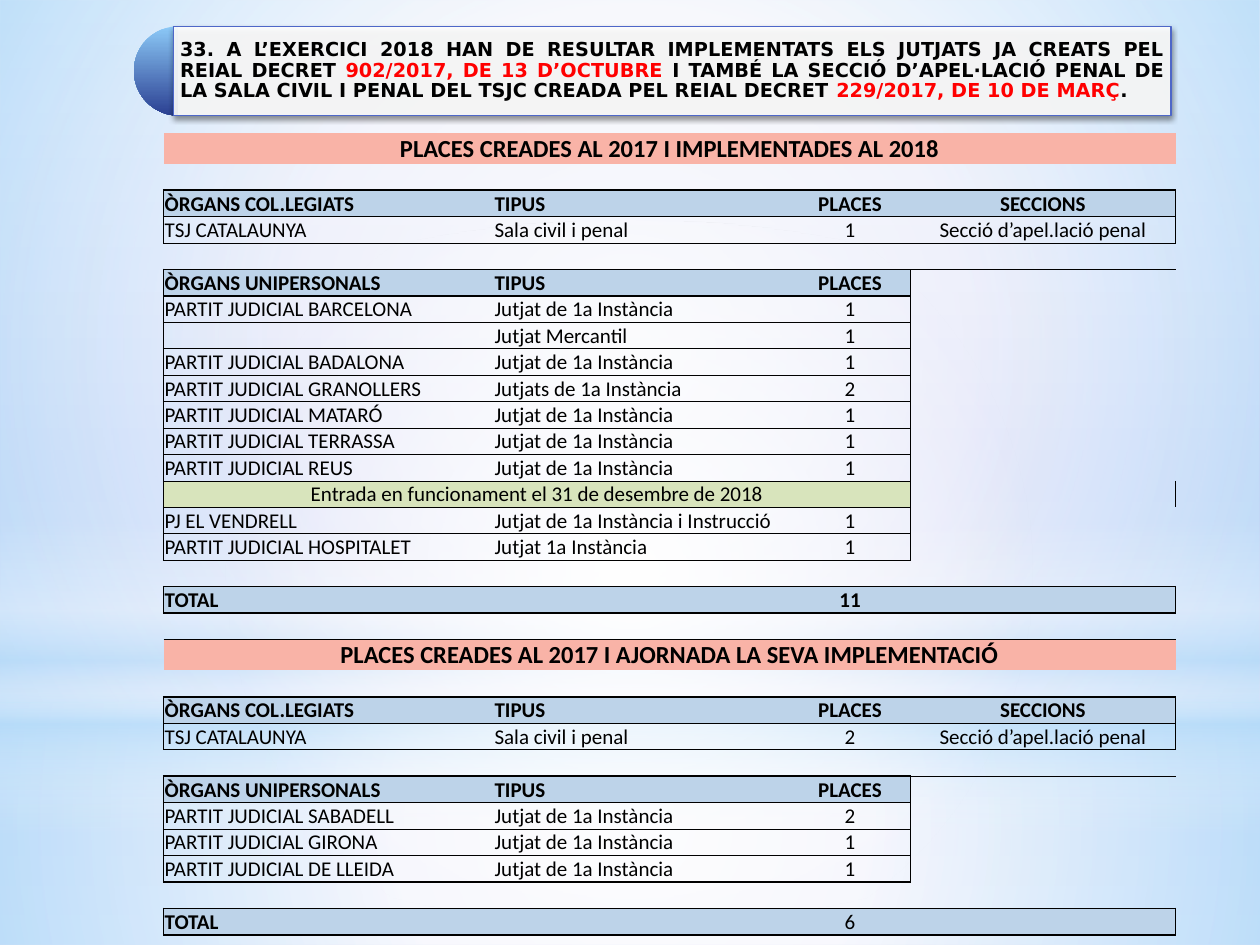
from lxml.etree import SubElement
from pptx import Presentation
from pptx.dml.color import RGBColor
from pptx.enum.shapes import MSO_SHAPE
from pptx.enum.text import MSO_ANCHOR, PP_ALIGN
from pptx.oxml.ns import qn
from pptx.util import Cm, Pt

COLORS = {
    "black": "000000", "red": "FF0000", "white": "FFFFFF", "sky": "B4DCFA",
    "salmon": "F9B3A7", "header": "BDD3E9", "note": "D8E4BC", "line": "4E67C8",
    "pie_top": "8CC9F7", "pie_bottom": "2B4092",
    "edge": "EBEEF9", "lilac": "C1C7F2", "foot": "E1E3F8",
}
BANNER = [
    ("33. A L’EXERCICI 2018 HAN DE RESULTAR IMPLEMENTATS ELS JUTJATS JA CREATS PEL REIAL DECRET ", "black"),
    ("902/2017, DE 13 D’OCTUBRE ", "red"),
    ("I TAMBÉ LA SECCIÓ D’APEL·LACIÓ PENAL DE LA SALA CIVIL I PENAL DEL TSJC CREADA PEL REIAL DECRET ", "black"),
    ("229/2017, DE 10 DE MARÇ", "red"),
    (".", "black"),
]
COLLEGIATE = ("ÒRGANS COL.LEGIATS", "TIPUS", "PLACES", "SECCIONS")
SINGLE = ("ÒRGANS UNIPERSONALS", "TIPUS", "PLACES")
FIRST_INSTANCE = "Jutjat de 1a Instància"
CREATED = [
    ("PARTIT JUDICIAL BARCELONA", FIRST_INSTANCE, "1"),
    ("", "Jutjat Mercantil", "1"),
    ("PARTIT JUDICIAL BADALONA", FIRST_INSTANCE, "1"),
    ("PARTIT JUDICIAL GRANOLLERS", "Jutjats de 1a Instància", "2"),
    ("PARTIT JUDICIAL MATARÓ", FIRST_INSTANCE, "1"),
    ("PARTIT JUDICIAL TERRASSA", FIRST_INSTANCE, "1"),
    ("PARTIT JUDICIAL REUS", FIRST_INSTANCE, "1"),
    ("Entrada en funcionament el 31 de desembre de 2018",),
    ("PJ EL VENDRELL", "Jutjat de 1a Instància i Instrucció", "1"),
    ("PARTIT JUDICIAL HOSPITALET", "Jutjat 1a Instància", "1"),
]
POSTPONED = [
    ("PARTIT JUDICIAL SABADELL", FIRST_INSTANCE, "2"),
    ("PARTIT JUDICIAL GIRONA", FIRST_INSTANCE, "1"),
    ("PARTIT JUDICIAL DE LLEIDA", FIRST_INSTANCE, "1"),
]
COLUMN_WIDTHS = (6.65, 5.97, 2.43, 5.35)
TABLE_HEIGHT, TITLE_HEIGHT = 16.19, 0.62
OPPOSITE = {"L": ("R", 0, -1), "R": ("L", 0, 1), "T": ("B", -1, 0), "B": ("T", 1, 0)}


def section_rows(title, places, courts, total, total_kind):
    """Return (kind, texts) for every row of one section."""
    court_rows = [("note" if len(court) == 1 else "data", court) for court in courts]
    return [
        ("title", (title,)), ("gap", ()),
        ("header", COLLEGIATE),
        ("data", ("TSJ CATALAUNYA", "Sala civil i penal", places, "Secció d’apel.lació penal")),
        ("gap", ()), ("header", SINGLE), *court_rows,
        ("gap", ()), (total_kind, ("TOTAL", "", total, "")),
    ]


class SlideBuilder:
    FONT = "Calibri"
    BANNER_FONT = "DejaVu Sans"
    FILLS = {"title": "salmon", "header": "header", "note": "note",
             "total": "header", "plain total": "header"}

    def __init__(self, presentation):
        self.slide = presentation.slides.add_slide(presentation.slide_layouts[6])

    def gradient(self, fill, holder, stops, angle=None):
        """Fill with (position, colour, opacity) stops; radial when no angle is given."""
        fill.solid()
        solid = holder.find(".//" + qn("a:solidFill"))
        gradient = SubElement(solid.getparent(), qn("a:gradFill"), rotWithShape="1")
        solid.getparent().replace(solid, gradient)
        stop_list = SubElement(gradient, qn("a:gsLst"))
        for position, color, opacity in stops:
            stop = SubElement(stop_list, qn("a:gs"), pos=str(position * 1000))
            value = SubElement(stop, qn("a:srgbClr"), val=COLORS[color])
            SubElement(value, qn("a:alpha"), val=str(opacity * 1000))
        if angle is None:
            radial = SubElement(gradient, qn("a:path"), path="circle")
            SubElement(radial, qn("a:fillToRect"), l="50000", t="50000", r="50000", b="50000")
        else:
            SubElement(gradient, qn("a:lin"), ang=str(angle * 60000), scaled="0")

    def background(self, stops):
        self.gradient(self.slide.background.fill, self.slide.element, stops, 90)

    def shape(self, preset, box):
        shape = self.slide.shapes.add_shape(preset, *map(Cm, box))
        shape.shadow.inherit = False
        shape.line.fill.background()
        return shape

    def gradient_shape(self, preset, box, stops, angle=None):
        shape = self.shape(preset, box)
        self.gradient(shape.fill, shape.element.spPr, stops, angle)
        return shape

    def panel(self, box):
        shape = self.shape(MSO_SHAPE.RECTANGLE, box)
        shape.fill.solid()
        shape.fill.fore_color.rgb = RGBColor.from_string(COLORS["white"])
        properties = shape.element.spPr
        SubElement(properties.find(".//" + qn("a:srgbClr")), qn("a:alpha"), val="90000")
        shape.line.color.rgb = RGBColor.from_string(COLORS["line"])
        shape.line.width = Pt(0.75)
        shadow = SubElement(properties.find(qn("a:effectLst")), qn("a:outerShdw"),
                            blurRad=str(Pt(3.1)), dist=str(Pt(1.8)), dir="5400000", rotWithShape="0")
        color = SubElement(shadow, qn("a:srgbClr"), val=COLORS["black"])
        SubElement(color, qn("a:alpha"), val="45000")

    def style(self, font, name, size, bold, color="black"):
        font.name, font.size, font.bold = name, Pt(size), bold
        font.color.rgb = RGBColor.from_string(COLORS[color])

    def banner_text(self, box, parts):
        frame = self.slide.shapes.add_textbox(*map(Cm, box)).text_frame
        frame.word_wrap = True
        frame.vertical_anchor = MSO_ANCHOR.MIDDLE
        frame.margin_left = frame.margin_right = frame.margin_top = frame.margin_bottom = Cm(0.13)
        paragraph = frame.paragraphs[0]
        paragraph.alignment = PP_ALIGN.JUSTIFY
        paragraph.line_spacing = 0.9
        for text, color in parts:
            run = paragraph.add_run()
            run.text = text
            self.style(run.font, self.BANNER_FONT, 11, True, color)

    def cell(self, cell, text, kind, column):
        cell.margin_left = cell.margin_right = cell.margin_top = Cm(0.02)
        cell.margin_bottom = 0
        cell.vertical_anchor = MSO_ANCHOR.BOTTOM
        if kind in self.FILLS:
            cell.fill.solid()
            cell.fill.fore_color.rgb = RGBColor.from_string(COLORS[self.FILLS[kind]])
        paragraph = cell.text_frame.paragraphs[0]
        if not text:
            SubElement(paragraph._p, qn("a:endParaRPr"), sz="1200")
            return
        paragraph.text = text
        centred = column >= 2 or kind in ("title", "note")
        paragraph.alignment = PP_ALIGN.CENTER if centred else PP_ALIGN.LEFT
        bold = kind in ("title", "header", "total") or text == "TOTAL"
        self.style(paragraph.runs[0].font, self.FONT, 14 if kind == "title" else 12, bold)

    def table(self, left, top, rows):
        frame = self.slide.shapes.add_table(len(rows), len(COLUMN_WIDTHS), Cm(left), Cm(top),
                                            Cm(sum(COLUMN_WIDTHS)), Cm(TABLE_HEIGHT))
        table = frame.table
        table.first_row = table.horz_banding = False
        # "No Style, No Grid"
        table._tbl.tblPr.find(qn("a:tableStyleId")).text = "{2D5ABB26-0587-4C30-8999-92F81FD0307C}"
        for column, width in zip(table.columns, COLUMN_WIDTHS):
            column.width = Cm(width)
        titles = sum(kind == "title" for kind, _ in rows)
        row_height = (TABLE_HEIGHT - titles * TITLE_HEIGHT) / (len(rows) - titles)
        for index, (kind, texts) in enumerate(rows):
            table.rows[index].height = Cm(TITLE_HEIGHT if kind == "title" else row_height)
            span = {"title": 4, "note": 3}.get(kind)
            if span:
                table.cell(index, 0).merge(table.cell(index, span - 1))
            used = span or len(texts)
            for column in range(len(COLUMN_WIDTHS)):
                text = texts[column] if column < len(texts) else ""
                self.cell(table.cell(index, column), text, kind if column < used else "gap", column)
        self.borders(table, rows)

    def borders(self, table, rows):
        """Frame every row that is neither title nor gap; neighbours share each line."""
        weights = {}

        def draw(row, column, side, weight):
            weights[row, column, side] = weight
            other, down, right = OPPOSITE[side]
            weights[row + down, column + right, other] = weight

        for index, (kind, texts) in enumerate(rows):
            if kind in ("title", "gap"):
                continue
            count = 3 if kind == "note" else len(texts)
            body = kind in ("data", "note")
            ends = index + 1 == len(rows) or rows[index + 1][0] == "gap"
            side_weight = 0.5 if body and count == 4 else 1
            bottom = (side_weight if ends else 0.5) if body else 1
            for column in range(count):
                if not body:
                    draw(index, column, "T", 1)
                draw(index, column, "B", bottom)
            draw(index, 0, "L", side_weight)
            draw(index, count - 1, "R", side_weight)
            if kind == "note":
                weights[index, 0, "R"] = side_weight
        for row in range(len(rows)):
            for column in range(len(COLUMN_WIDTHS)):
                properties = table.cell(row, column)._tc.get_or_add_tcPr()
                sides = [side for side in "LRTB" if (row, column, side) in weights]
                for position, side in enumerate(sides):
                    width = Pt(weights[row, column, side])
                    line = SubElement(properties, qn("a:ln" + side), w=str(width))
                    properties.insert(position, line)
                    fill = SubElement(line, qn("a:solidFill"))
                    SubElement(fill, qn("a:srgbClr"), val=COLORS["black"])


def main():
    presentation = Presentation()
    presentation.slide_width, presentation.slide_height = Cm(25.4), Cm(19.05)
    builder = SlideBuilder(presentation)
    builder.background([(0, "edge", 100), (50, "lilac", 100), (100, "foot", 100)])
    rectangle = MSO_SHAPE.RECTANGLE
    builder.gradient_shape(rectangle, (0, 14.17, 25.4, 4.88),
                           [(0, "white", 91), (37, "white", 76), (100, "sky", 79)])
    builder.gradient_shape(rectangle, (0, 0, 25.4, 14.17),
                           [(0, "white", 89), (48, "white", 62), (100, "sky", 79)])
    builder.gradient_shape(rectangle, (0, 10.46, 25.4, 6.35),
                           [(0, "white", 0), (29, "white", 30), (45, "sky", 40),
                            (55, "white", 26), (65, "sky", 60), (100, "white", 0)], 90)
    builder.gradient_shape(MSO_SHAPE.OVAL, (0, 4.45, 25.4, 14.17), [(0, "white", 100), (56, "white", 0)])

    pie = builder.gradient_shape(MSO_SHAPE.PIE, (2.7, 0.53, 1.8, 1.8),
                                 [(0, "pie_top", 100), (100, "pie_bottom", 100)], 90)
    pie.adjustments[0], pie.adjustments[1] = 54, 162
    banner_box = (3.5, 0.53, 20.11, 1.8)
    builder.panel(banner_box)
    builder.banner_text(banner_box, BANNER)

    rows = section_rows("PLACES CREADES AL 2017 I IMPLEMENTADES AL 2018", "1", CREATED, "11", "total")
    rows.append(("gap", ()))
    rows += section_rows("PLACES CREADES AL 2017 I AJORNADA LA SEVA IMPLEMENTACIÓ", "2",
                         POSTPONED, "6", "plain total")
    builder.table(3.3, 2.68, rows)
    presentation.save("out.pptx")


if __name__ == "__main__":
    main()
